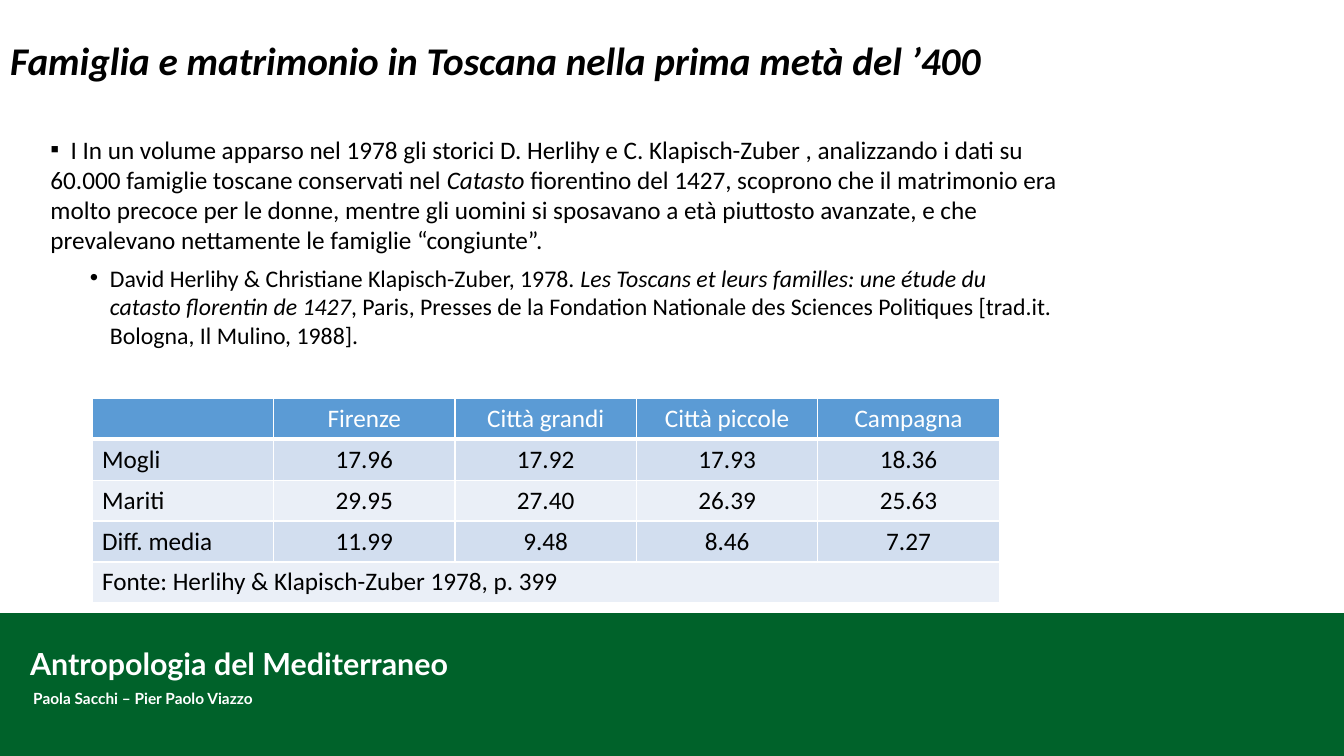
import pptx
import pptx.dml.color
import pptx.enum.shapes
import pptx.enum.text
import pptx.oxml
import pptx.oxml.ns
import pptx.util

Pt = pptx.util.Pt
RGBColor = pptx.dml.color.RGBColor
ALIGN = pptx.enum.text.PP_ALIGN
NAMESPACE = pptx.oxml.ns.nsdecls("a")

WHITE = RGBColor(0xFF, 0xFF, 0xFF)
BLACK = RGBColor(0, 0, 0)
GREEN = RGBColor(0x00, 0x62, 0x2A)
BLUE = RGBColor(0x5B, 0x9B, 0xD5)
BAND_DARK = RGBColor(0xD2, 0xDE, 0xEF)
BAND_LIGHT = RGBColor(0xEA, 0xEF, 0xF7)

WIDTH, HEIGHT = 960, 540

BODY = [
    {
        "runs": [
            ("\tI In un volume apparso nel 1978 gli storici D. Herlihy e C. Klapisch-Zuber , "
             "analizzando i dati su 60.000 famiglie toscane conservati nel ", False),
            ("Catasto", True),
            (" fiorentino del 1427, scoprono che il matrimonio era molto precoce per le donne, "
             "mentre gli uomini si sposavano a età piuttosto avanzate, e che prevalevano "
             "nettamente le famiglie “congiunte”.", False),
        ],
        "bullet": "▪", "margin": 0, "indent": 0, "tab": 14.4, "size": 18, "after": 6,
    },
    {
        "runs": [
            ("David Herlihy & Christiane Klapisch-Zuber, 1978. ", False),
            ("Les Toscans et leurs familles: une étude du catasto florentin de 1427", True),
            (", Paris, Presses de la Fondation Nationale des Sciences Politiques "
             "[trad.it. Bologna, Il Mulino, 1988].", False),
        ],
        "bullet": "•", "margin": 42.5, "indent": -14.4, "tab": None, "size": 17, "after": 0,
    },
]

MARRIAGE_AGES = [
    ["", "Firenze", "Città grandi", "Città piccole", "Campagna"],
    ["Mogli", "17.96", "17.92", "17.93", "18.36"],
    ["Mariti", "29.95", "27.40", "26.39", "25.63"],
    ["Diff. media", "11.99", "9.48", "8.46", "7.27"],
    ["Fonte: Herlihy & Klapisch-Zuber 1978, p. 399", "", "", "", ""],
]


class SlideBuilder:
    """Holds the style and the current slide."""

    font_name = "Calibri"
    footer_font = "Lato"

    def __init__(self, presentation):
        self.slide = presentation.slides.add_slide(presentation.slide_layouts[5])

    def format(self, target, **values):
        for name, value in values.items():
            setattr(target, name, value)

    def style(self, font, size, color=BLACK, **values):
        self.format(font, **{"name": self.font_name, "size": Pt(size), **values})
        font.color.rgb = color

    def prepare(self, frame):
        self.format(frame, word_wrap=True,
                    auto_size=pptx.enum.text.MSO_AUTO_SIZE.NONE,
                    vertical_anchor=pptx.enum.text.MSO_ANCHOR.TOP)

    def title(self, text, left, top, width, height):
        title = self.slide.shapes.title
        self.format(title, left=Pt(left), top=Pt(top), width=Pt(width), height=Pt(height))
        self.prepare(title.text_frame)
        title.text_frame.text = text
        paragraph = title.text_frame.paragraphs[0]
        paragraph.alignment = ALIGN.LEFT
        self.style(paragraph.runs[0].font, 28, bold=True, italic=True)

    def band(self, left, top, width, height, color):
        shape = self.slide.shapes.add_shape(
            pptx.enum.shapes.MSO_SHAPE.RECTANGLE, Pt(left), Pt(top), Pt(width), Pt(height))
        shape.shadow.inherit = False
        shape.fill.solid()
        shape.fill.fore_color.rgb = color
        shape.line.fill.background()

    def text_box(self, left, top, width, height):
        box = self.slide.shapes.add_textbox(Pt(left), Pt(top), Pt(width), Pt(height))
        self.prepare(box.text_frame)
        return box.text_frame

    def footer_line(self, text, left, top, size, line_spacing):
        paragraph = self.text_box(left, top, 929, 27).paragraphs[0]
        paragraph.line_spacing = line_spacing
        run = paragraph.add_run()
        run.text = text
        self.style(run.font, size, WHITE, name=self.footer_font, bold=True)

    def bullets(self, items, left, top, width, height):
        frame = self.text_box(left, top, width, height)
        for index, item in enumerate(items):
            paragraph = frame.add_paragraph() if index else frame.paragraphs[0]
            paragraph.space_after = Pt(item["after"])
            properties = paragraph._p.get_or_add_pPr()
            properties.set("marL", str(Pt(item["margin"])))
            properties.set("indent", str(Pt(item["indent"])))
            marks = [f'<a:buFont {NAMESPACE} typeface="Arial"/>',
                     f'<a:buChar {NAMESPACE} char="{item["bullet"]}"/>']
            if item["tab"]:
                marks.append(f'<a:tabLst {NAMESPACE}><a:tab pos="{Pt(item["tab"])}" algn="l"/>'
                             '</a:tabLst>')
            for mark in marks:
                properties.append(pptx.oxml.parse_xml(mark))
            for text, italic in item["runs"]:
                run = paragraph.add_run()
                run.text = text
                self.style(run.font, item["size"], italic=italic)

    def cell_borders(self, cell, bottom):
        properties = cell._tc.get_or_add_tcPr()
        for side, width in {"L": 1, "R": 1, "T": 1, "B": bottom}.items():
            properties.append(pptx.oxml.parse_xml(
                f'<a:ln{side} {NAMESPACE} w="{Pt(width)}"><a:solidFill>'
                f'<a:srgbClr val="{WHITE}"/></a:solidFill></a:ln{side}>'))

    def table(self, rows, left, top, column_width, row_height):
        columns = len(rows[0])
        table = self.slide.shapes.add_table(
            len(rows), columns, Pt(left), Pt(top),
            Pt(column_width * columns), Pt(row_height * len(rows))).table
        self.format(table, first_row=False, horz_banding=False)
        for row_index, values in enumerate(rows):
            header = row_index == 0
            fill = BLUE if header else BAND_DARK if row_index % 2 else BAND_LIGHT
            for column_index, value in enumerate(values):
                cell = table.cell(row_index, column_index)
                self.cell_borders(cell, 3 if header else 1)
                cell.fill.solid()
                cell.fill.fore_color.rgb = fill
                cell.text = value
                paragraph = cell.text_frame.paragraphs[0]
                paragraph.alignment = ALIGN.CENTER if column_index else ALIGN.LEFT
                self.style(paragraph.font, 18, WHITE if header else BLACK, bold=False)
                for run in paragraph.runs:
                    self.style(run.font, 18, WHITE if header else BLACK, bold=False)
        # The source note spans the last row
        last = len(rows) - 1
        table.cell(last, 0).merge(table.cell(last, columns - 1))


def main():
    presentation = pptx.Presentation()
    presentation.slide_width, presentation.slide_height = Pt(WIDTH), Pt(HEIGHT)
    builder = SlideBuilder(presentation)

    # Footer band
    builder.band(0, 438, WIDTH, HEIGHT - 438, GREEN)
    builder.footer_line("Antropologia del Mediterraneo", 14.4, 464.4, 21.7, 0.7)
    builder.footer_line("Paola Sacchi – Pier Paolo Viazzo", 16.6, 490.3, 11, 0.9)

    # Title and text
    builder.title("Famiglia e matrimonio in Toscana nella prima metà del ’400",
                  0, 22.3, WIDTH, 60)
    builder.bullets(BODY, 29, 92.2, 736, 163.4)

    # Ages at marriage
    builder.table(MARRIAGE_AGES, 65.8, 284.6, 129.6, 28.8)

    presentation.save("out.pptx")


if __name__ == "__main__":
    main()
